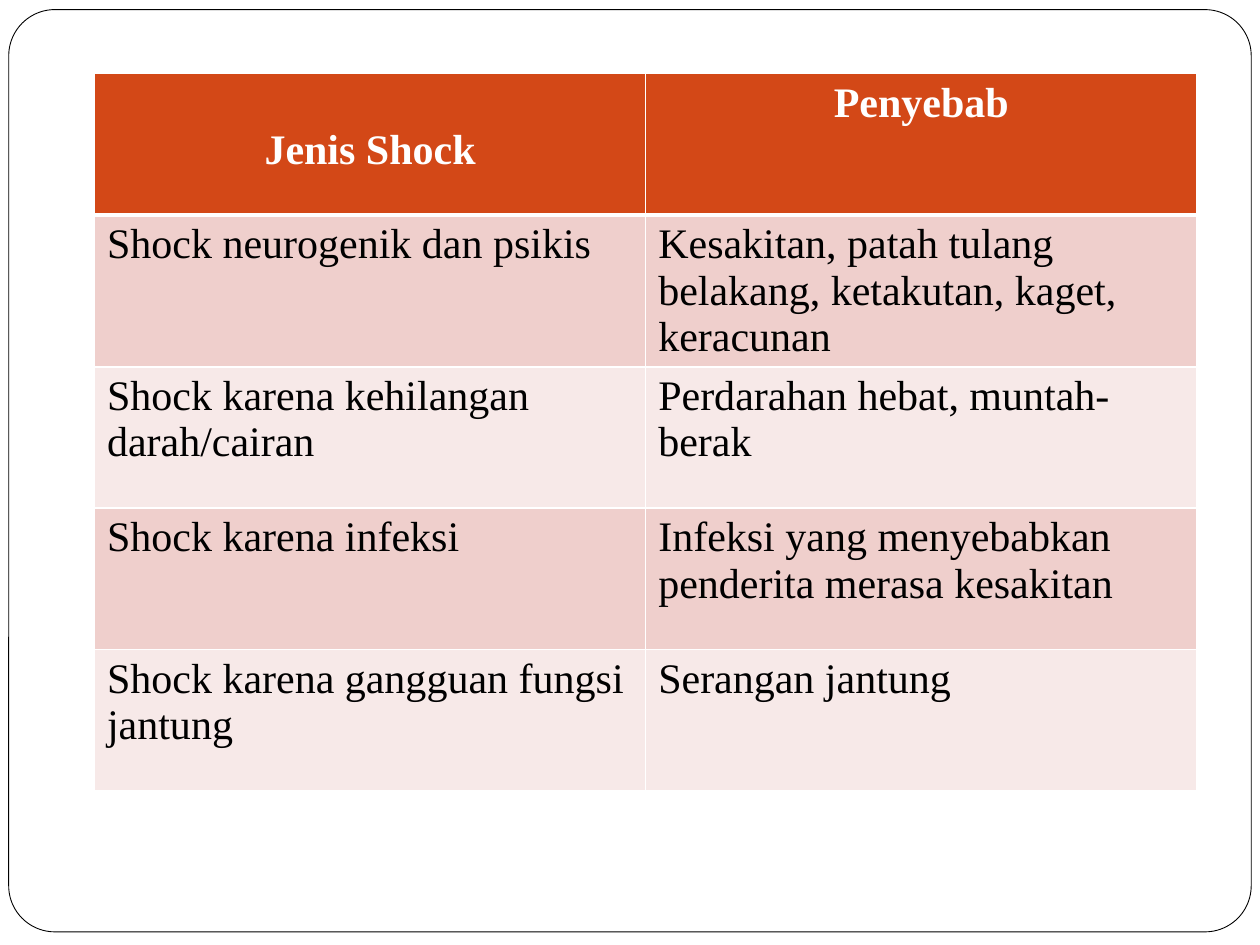
from lxml import etree
from pptx import Presentation
from pptx.dml.color import RGBColor
from pptx.enum.shapes import MSO_SHAPE
from pptx.enum.text import PP_ALIGN
from pptx.oxml.ns import qn
from pptx.util import Pt

ROUNDED = MSO_SHAPE.ROUNDED_RECTANGLE
LEFT, CENTER = PP_ALIGN.LEFT, PP_ALIGN.CENTER

# Content
ROWS = [
    ("Jenis Shock", "Penyebab"),
    ("Shock neurogenik dan psikis",
     "Kesakitan, patah tulang belakang, ketakutan, kaget, keracunan"),
    ("Shock karena kehilangan darah/cairan", "Perdarahan hebat, muntah-berak"),
    ("Shock karena infeksi",
     "Infeksi yang menyebabkan penderita merasa kesakitan"),
    ("Shock karena gangguan fungsi jantung", "Serangan jantung"),
]

# Style
FONT, SIZE = "Times New Roman", 24
WHITE, BLACK, HEADER = "FFFFFF", "000000", "D34817"
BANDS = ("F7E9E8", "EFCFCC")
TABLE_X, TABLE_Y, COL_W, ROW_H = 54, 42, 315, 80.8
HEADER_DROP = 30.6  # top margin that lowers the first heading by one line


def rgb(value):
    return RGBColor.from_string(value)


def set_borders(cell, bottom):
    tc_pr = cell._tc.get_or_add_tcPr()
    widths = {"a:lnL": 1, "a:lnR": 1, "a:lnT": 1, "a:lnB": bottom}
    for i, (tag, width) in enumerate(widths.items()):
        ln = etree.Element(qn(tag), w=str(Pt(width)))
        fill = etree.SubElement(ln, qn("a:solidFill"))
        etree.SubElement(fill, qn("a:srgbClr"), val=WHITE)
        tc_pr.insert(i, ln)


def fill_cell(cell, text, row):
    is_header = row == 0
    cell.fill.solid()
    cell.fill.fore_color.rgb = rgb(HEADER if is_header else BANDS[row % 2])
    set_borders(cell, 3 if is_header else 1)
    p = cell.text_frame.paragraphs[0]
    p.alignment = CENTER if is_header else LEFT
    r = p.add_run()
    r.text = text
    r.font.name, r.font.size, r.font.bold = FONT, Pt(SIZE), is_header
    r.font.color.rgb = rgb(WHITE if is_header else BLACK)


prs = Presentation()
prs.slide_width, prs.slide_height = Pt(720), Pt(540)
s = prs.slides.add_slide(prs.slide_layouts[6])

# Rounded frame
frame = s.shapes.add_shape(ROUNDED, Pt(5), Pt(5.5), Pt(710), Pt(527))
frame.adjustments[0] = 0.05
frame.shadow.inherit = False
frame.fill.solid()
frame.fill.fore_color.rgb = rgb(WHITE)
frame.line.color.rgb = rgb(BLACK)
frame.line.width = Pt(0.5)

# Table of shock types and causes
n_rows, n_cols = len(ROWS), len(ROWS[0])
table = s.shapes.add_table(n_rows, n_cols, Pt(TABLE_X), Pt(TABLE_Y),
                           Pt(COL_W * n_cols), Pt(ROW_H * n_rows)).table
for col in table.columns:
    col.width = Pt(COL_W)
for i, texts in enumerate(ROWS):
    table.rows[i].height = Pt(ROW_H)
    for j, text in enumerate(texts):
        fill_cell(table.cell(i, j), text, i)
table.cell(0, 0).margin_top = Pt(HEADER_DROP)

prs.save("out.pptx")
